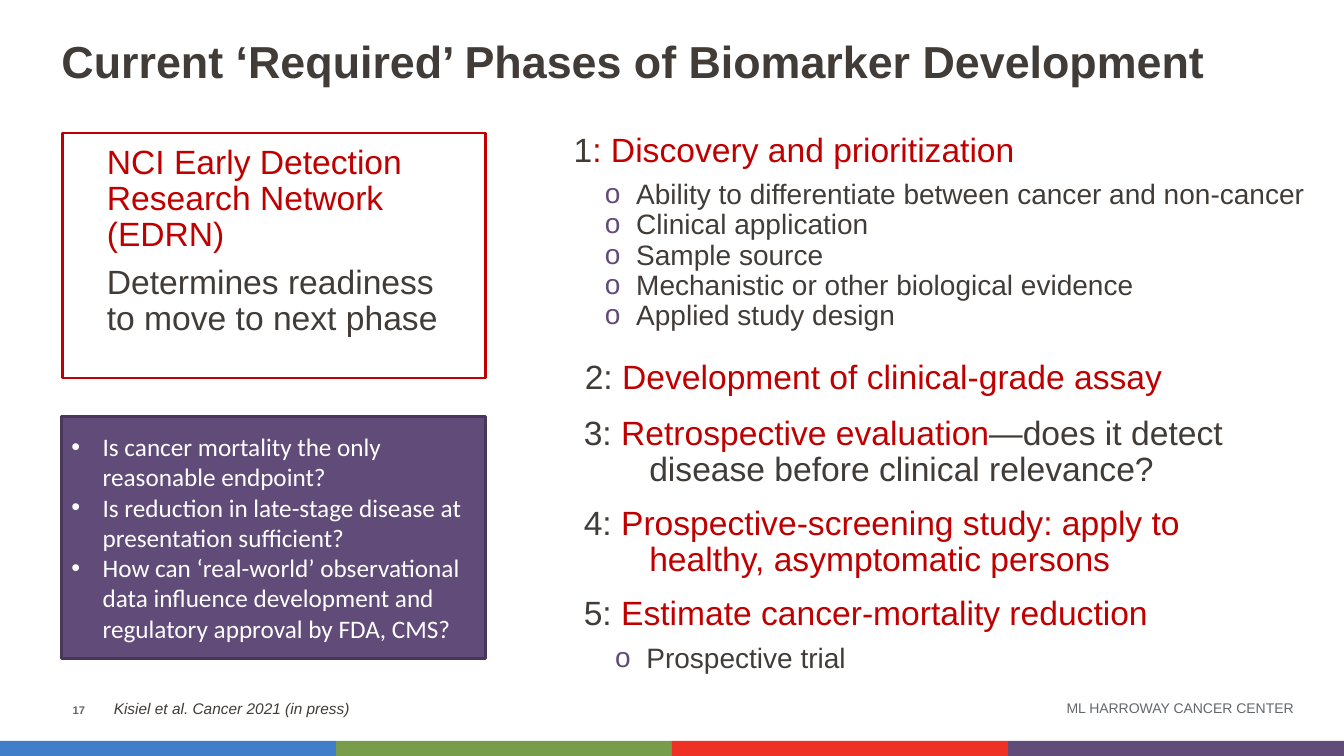
"""Builds the slide on the required phases of biomarker development."""
from lxml import etree
from pptx import Presentation
from pptx.dml.color import RGBColor
from pptx.enum.shapes import MSO_SHAPE
from pptx.enum.text import MSO_ANCHOR, MSO_AUTO_SIZE, PP_ALIGN
from pptx.oxml.ns import qn
from pptx.util import Pt

RECTANGLE = MSO_SHAPE.RECTANGLE
TOP, MIDDLE, BOTTOM = MSO_ANCHOR.TOP, MSO_ANCHOR.MIDDLE, MSO_ANCHOR.BOTTOM
LEFT, RIGHT = PP_ALIGN.LEFT, PP_ALIGN.RIGHT
NO_AUTOFIT = MSO_AUTO_SIZE.NONE
PX = 9144
SLIDE_WIDTH, SLIDE_HEIGHT = 1333, 750
DARK, RED, PURPLE, GRAY, WHITE = "413C38", "C00000", "614B79", "63666A", "FFFFFF"


def color(value):
    return RGBColor.from_string(value)


def write(shape, paragraphs, size, spacing=0.9, font="Arial", anchor=TOP, align=LEFT,
          insets=(0, 0), bold=False, italic=False, wrap=True):
    """Fills a shape with (runs, options) paragraphs, each run a (text, colour) pair."""
    frame = shape.text_frame
    frame.auto_size = NO_AUTOFIT
    frame.word_wrap = wrap
    frame.vertical_anchor = anchor
    frame.margin_left = frame.margin_right = insets[0] * PX
    frame.margin_top = frame.margin_bottom = insets[1] * PX
    for index, (runs, options) in enumerate(paragraphs):
        paragraph = frame.add_paragraph() if index else frame.paragraphs[0]
        paragraph.alignment = align
        paragraph.line_spacing = spacing
        paragraph.space_before = Pt(options.get("before", 0))
        paragraph.space_after = Pt(0)
        properties = paragraph._p.get_or_add_pPr()
        properties.set("marL", str(options.get("margin", 0) * PX))
        properties.set("indent", str(options.get("indent", 0) * PX))
        if "bullet" in options:
            bullet_color = etree.SubElement(properties, qn("a:buClr"))
            etree.SubElement(bullet_color, qn("a:srgbClr"), val=options["bullet_color"])
            etree.SubElement(properties, qn("a:buFont"), typeface="Arial")
            etree.SubElement(properties, qn("a:buChar"), char=options["bullet"])
        else:
            etree.SubElement(properties, qn("a:buNone"))
        for text, run_color in runs:
            run = paragraph.add_run()
            run.text = text
            run.font.name = font
            run.font.size = Pt(options.get("size", size))
            run.font.bold = bold
            run.font.italic = italic
            run.font.color.rgb = color(run_color)


presentation = Presentation()
presentation.slide_width = SLIDE_WIDTH * PX
presentation.slide_height = SLIDE_HEIGHT * PX
slide = presentation.slides.add_slide(presentation.slide_layouts[5])
shapes = slide.shapes

title = shapes.title
title.left, title.top, title.width, title.height = 61 * PX, -5 * PX, 1211 * PX, 93 * PX
write(title, [([("Current ‘Required’ Phases of Biomarker Development", DARK)], {})],
      32, anchor=BOTTOM, bold=True)

boxes = []
for left, top, width, height, fill, line in [
    (62, 132, 420, 243, None, RED),
    (61, 413, 421, 240, PURPLE, "48375A"),
]:
    box = shapes.add_shape(RECTANGLE, left * PX, top * PX, width * PX, height * PX)
    box.shadow.inherit = False
    if fill:
        box.fill.solid()
        box.fill.fore_color.rgb = color(fill)
    else:
        box.fill.background()
    box.line.color.rgb = color(line)
    box.line.width = Pt(2)
    boxes.append(box)
network_box, question_box = boxes

write(network_box, [
    ([("NCI Early Detection Research Network (EDRN)", RED)], {"margin": 44}),
    ([("Determines readiness", DARK)], {"margin": 44, "before": 8}),
    ([("to move to next phase", DARK)], {"margin": 44}),
], 24, insets=(0, 12))

questions = [
    "Is cancer mortality the only reasonable endpoint?",
    "Is reduction in late-stage disease at presentation sufficient?",
    "How can ‘real-world’ observational data influence development and "
    "regulatory approval by FDA, CMS?",
]
question_bullet = {"margin": 31, "indent": -31, "bullet": "•", "bullet_color": WHITE}
write(question_box, [([(question, WHITE)], question_bullet) for question in questions],
      18, spacing=1.0, font="Calibri", anchor=MIDDLE, insets=(10, 5))

detail = {"margin": 62, "indent": -31, "bullet": "o", "bullet_color": PURPLE, "size": 20}
first_detail = {**detail, "before": 8}
continuation = {"margin": 65}
phases = [
    (569, 132, 740, 223, 0.9, [
        ([("1", DARK), (": Discovery and prioritization", RED)], {}),
        ([("Ability to differentiate between cancer and non-cancer", DARK)], first_detail),
        ([("Clinical application", DARK)], detail),
        ([("Sample source", DARK)], detail),
        ([("Mechanistic or other biological evidence", DARK)], detail),
        ([("Applied study design", DARK)], detail),
    ]),
    (580, 361, 729, 35, 0.8, [
        ([("2: ", DARK), ("Development of clinical-grade assay", RED)], {}),
    ]),
    (579, 413, 729, 84, 0.9, [
        ([("3: ", DARK), ("Retrospective evaluation", RED), ("—does it detect", DARK)], {}),
        ([("disease before clinical relevance?", DARK)], continuation),
    ]),
    (579, 502, 729, 84, 0.9, [
        ([("4: ", DARK), ("Prospective-screening study: apply to", RED)], {}),
        ([("healthy, asymptomatic persons", RED)], continuation),
    ]),
    (579, 592, 729, 98, 0.9, [
        ([("5: ", DARK), ("Estimate cancer-mortality reduction", RED)], {}),
        ([("Prospective trial", DARK)], first_detail),
    ]),
]
for left, top, width, height, spacing, paragraphs in phases:
    phase = shapes.add_textbox(left * PX, top * PX, width * PX, height * PX)
    write(phase, paragraphs, 24, spacing=spacing)

page_number = shapes.add_textbox(72 * PX, 684 * PX, 62 * PX, 40 * PX)
write(page_number, [([("17", GRAY)], {})], 8, spacing=1.0, anchor=MIDDLE, bold=True)

citation = shapes.add_textbox(103 * PX, 689 * PX, 268 * PX, 29 * PX)
write(citation, [([("Kisiel et al. Cancer 2021 (in press)", DARK)], {})],
      11, spacing=1.0, insets=(10, 5), italic=True, wrap=False)

center_name = shapes.add_textbox(1035 * PX, 670 * PX, 248 * PX, 65 * PX)
write(center_name, [([("ML HARROWAY CANCER CENTER", GRAY)], {})],
      10, spacing=1.0, anchor=MIDDLE, align=RIGHT)

band_colors = ["407EC9", "789D4A", "EE3124", PURPLE]
band_width = SLIDE_WIDTH * PX // len(band_colors)
for index, band_color in enumerate(band_colors):
    band = shapes.add_shape(RECTANGLE, index * band_width, 735 * PX, band_width, 15 * PX)
    band.shadow.inherit = False
    band.fill.solid()
    band.fill.fore_color.rgb = color(band_color)
    band.line.fill.background()

presentation.save("out.pptx")
